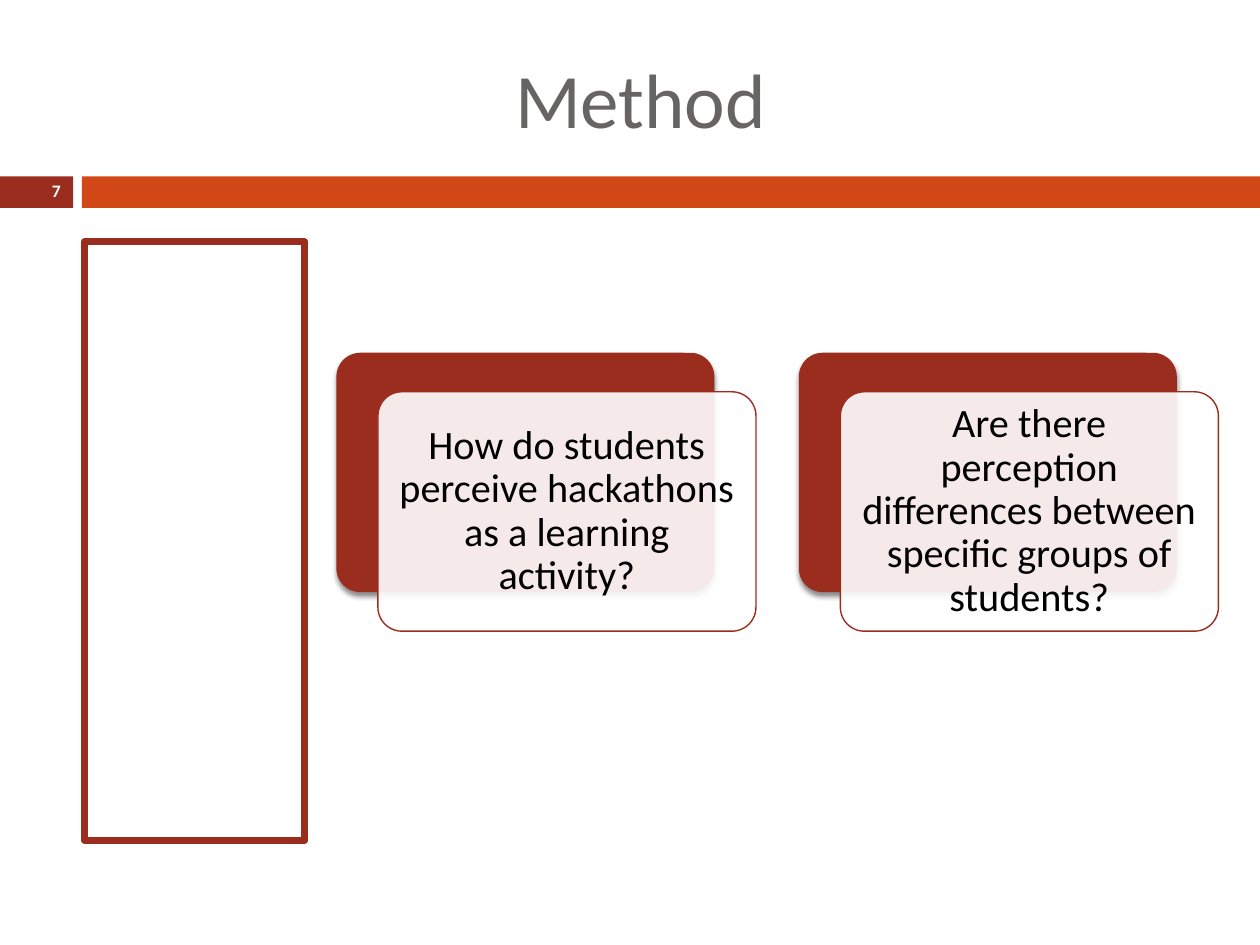
from lxml.etree import SubElement
from pptx import Presentation
from pptx.dml.color import RGBColor
from pptx.enum.shapes import MSO_SHAPE as SHAPE
from pptx.enum.text import MSO_ANCHOR as ANCHOR, PP_ALIGN as ALIGN
from pptx.oxml import parse_xml
from pptx.oxml.ns import nsdecls, qn
from pptx.util import Inches, Pt

RED, ORANGE, GREY = "9B2D1F", "D34817", "696464"
WHITE, BLACK = "FFFFFF", "000000"

SHADOW = f"""<a:effectLst {nsdecls("a")}>
  <a:outerShdw blurRad="{Pt(3)}" dist="{Pt(2.4)}" dir="5400000" rotWithShape="0">
    <a:srgbClr val="{BLACK}"><a:alpha val="45000"/></a:srgbClr>
  </a:outerShdw>
</a:effectLst>"""


def rgb(color):
    return RGBColor.from_string(color)


class SlideBuilder:
    font = "Calibri"

    def __init__(self, prs):
        self.slide = prs.slides.add_slide(prs.slide_layouts[5])

    def add_text(self, sp, text, size, color, align=ALIGN.CENTER, bold=False,
                 inset=(0.1, 0.05), spacing=None, after=0):
        tf = sp.text_frame
        tf.word_wrap = True
        tf.vertical_anchor = ANCHOR.MIDDLE
        tf.margin_left = tf.margin_right = Inches(inset[0])
        tf.margin_top = tf.margin_bottom = Inches(inset[1])
        p = tf.paragraphs[0]
        p.alignment = align
        p.line_spacing = spacing
        p.space_after = Pt(after)
        r = p.add_run()
        r.text = text
        r.font.name, r.font.size, r.font.bold = self.font, Pt(size), bold
        r.font.color.rgb = rgb(color)

    def title(self, text, x, y, w, h):
        sp = self.slide.shapes.title
        sp.left, sp.top, sp.width, sp.height = map(Inches, (x, y, w, h))
        self.add_text(sp, text, 44, GREY)

    def box(self, x, y, w, h, fill=None, line=None, line_width=1, kind=SHAPE.RECTANGLE):
        sp = self.slide.shapes.add_shape(kind, *map(Inches, (x, y, w, h)))
        sp.shadow.inherit = False
        if fill:
            sp.fill.solid()
            sp.fill.fore_color.rgb = rgb(fill)
        else:
            sp.fill.background()
        if line:
            sp.line.color.rgb = rgb(line)
            sp.line.width = Pt(line_width)
        else:
            sp.line.fill.background()
        return sp

    def rounded(self, x, y, w, h, **style):
        sp = self.box(x, y, w, h, kind=SHAPE.ROUNDED_RECTANGLE, **style)
        sp.adjustments[0] = 0.1
        return sp

    def question_card(self, x, y, text):
        """Red back plate with a shadow and an offset, slightly clear front card."""
        w, h = 3, 1.9
        back = self.rounded(x, y, w, h, fill=RED)
        props = back.element.spPr
        props.replace(props.find(qn("a:effectLst")), parse_xml(SHADOW))
        front = self.rounded(x + 0.33, y + 0.31, w, h, fill=WHITE, line=RED, line_width=0.79)
        color = front.element.spPr.find(qn("a:solidFill")).find(qn("a:srgbClr"))
        SubElement(color, qn("a:alpha"), val="90000")
        self.add_text(front, text, 23, BLACK, inset=(0.1, 0.1), spacing=0.9, after=8)


def main():
    prs = Presentation()
    prs.slide_width, prs.slide_height = Inches(10), Inches(7.5)
    s = SlideBuilder(prs)

    number_bar = s.box(0, 1.4, 0.58, 0.25, fill=RED)
    s.add_text(number_bar, "7", 10, WHITE, ALIGN.RIGHT, bold=True, inset=(0.1, 0), spacing=0.9)
    s.box(0.65, 1.4, 9.35, 0.25, fill=ORANGE)
    s.title("Method", 0.67, 0.3, 8.83, 0.95)
    s.box(0.67, 1.92, 1.75, 4.75, line=RED, line_width=4)

    questions = (
        "How do students perceive hackathons as a learning activity?",
        "Are there perception differences between specific groups of students?",
    )
    for i, question in enumerate(questions):
        s.question_card(2.67 + i * 3.67, 2.8, question)

    prs.save("out.pptx")


if __name__ == "__main__":
    main()
